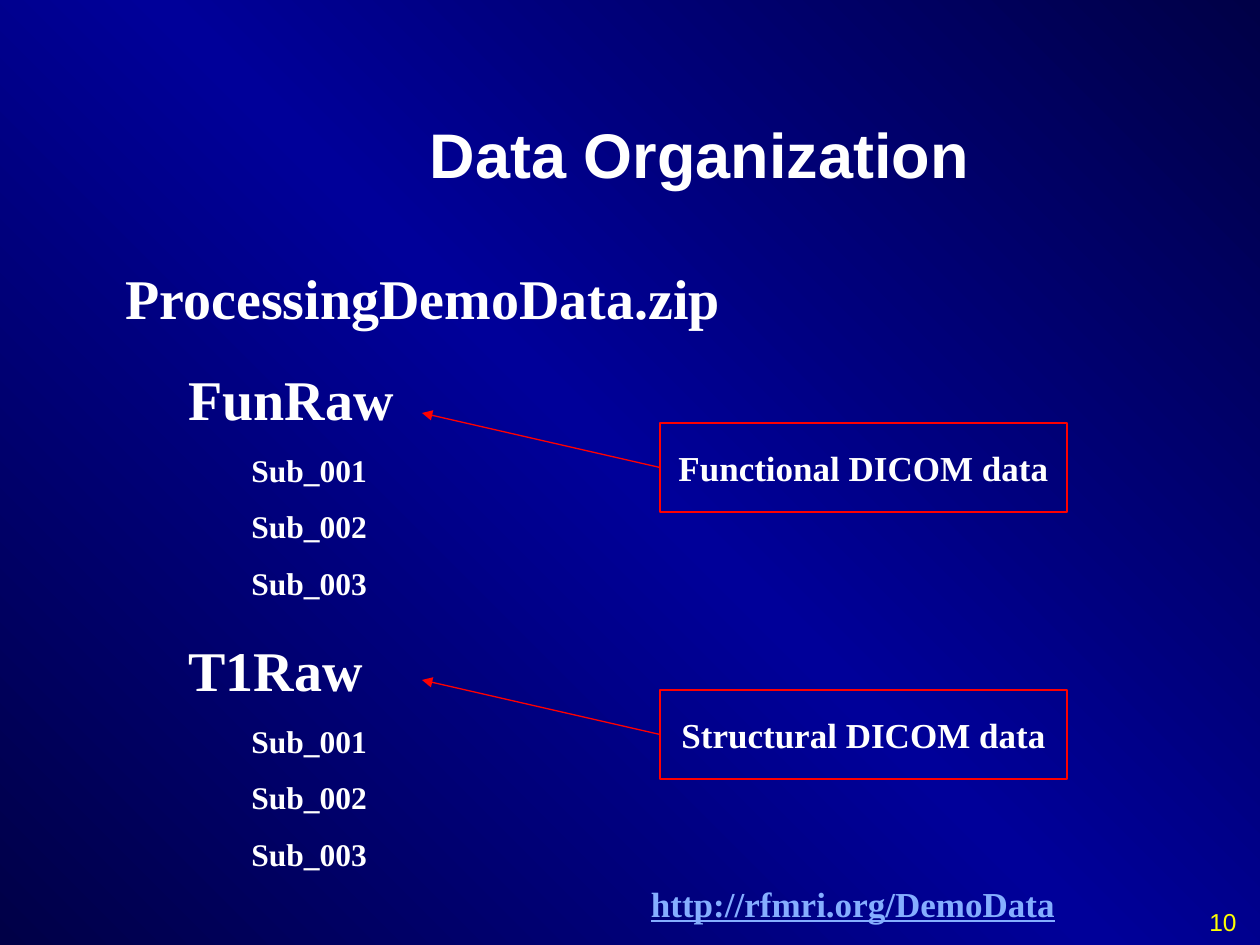
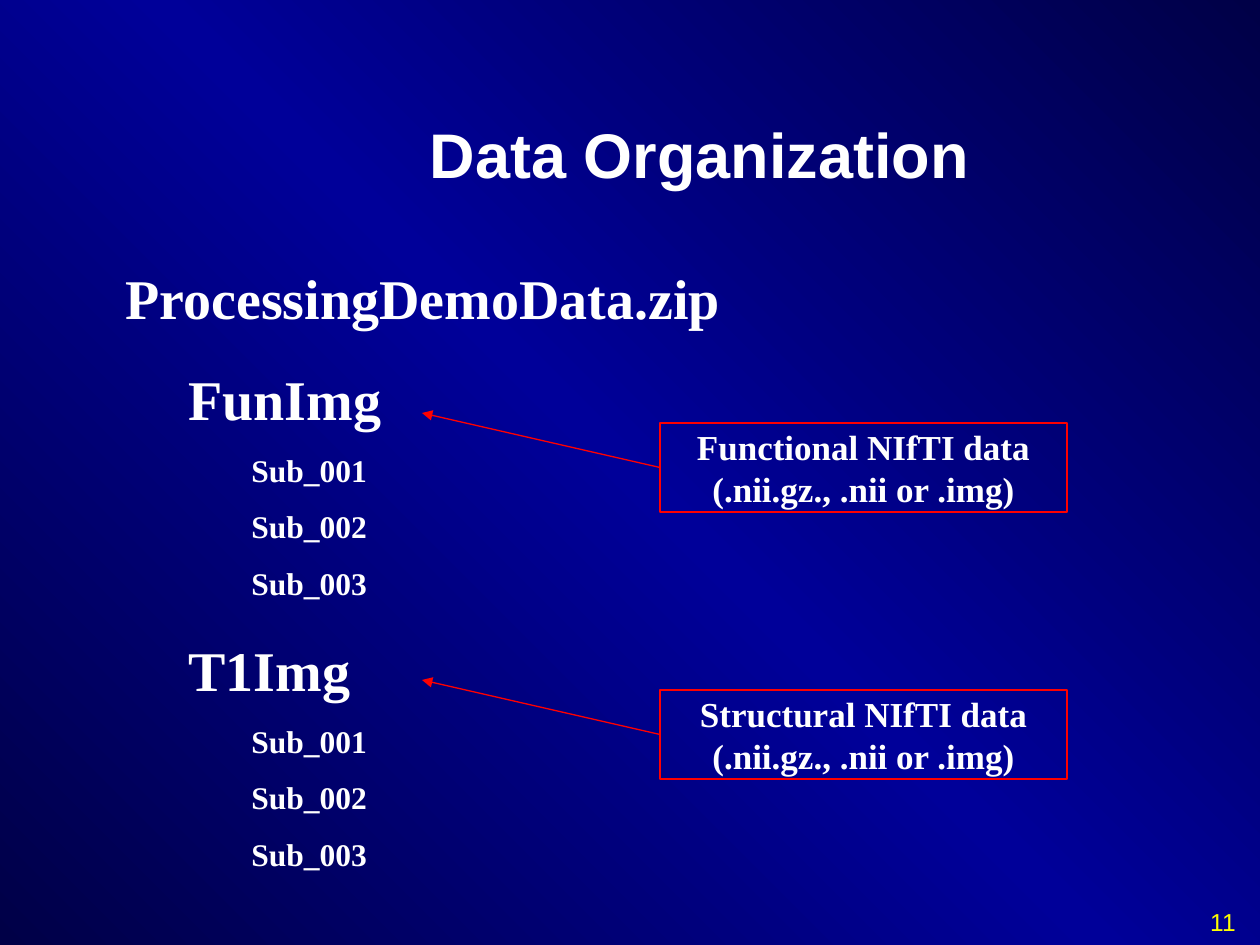
from copy import deepcopy
from dataclasses import dataclass

from lxml.etree import SubElement
from pptx import Presentation
from pptx.dml.color import RGBColor
from pptx.enum.shapes import MSO_CONNECTOR, MSO_SHAPE
from pptx.enum.text import MSO_ANCHOR, PP_ALIGN
from pptx.oxml.ns import qn
from pptx.shapes.autoshape import Shape
from pptx.slide import Slide
from pptx.text.text import _Paragraph as Paragraph
from pptx.util import Emu, Inches, Pt

PX_PER_INCH = 126
SANS, SERIF = "Arial", "Times New Roman"
WHITE, RED, YELLOW, LINK_BLUE = "FFFFFF", "FF0000", "FFFF00", "85AEFF"
BACKGROUND_STOPS = [(0, "000047"), (0.5, "000099"), (1, "000047")]
SUBJECTS = ["Sub_001", "Sub_002", "Sub_003"]
LEVEL_SIZES = [32, 32, 18]
LEVEL_INDENT = 63
FOLDER_PITCH = 267


@dataclass(frozen=True)
class TextStyle:
    size: int
    font: str = SERIF
    color: str = WHITE
    bold: bool = True
    underline: bool = False


@dataclass(frozen=True)
class Box:
    left: int
    top: int
    width: int
    height: int

    def emu(self) -> list[Emu]:
        return [px(value) for value in (self.left, self.top, self.width, self.height)]


@dataclass(frozen=True)
class Folder:
    name: str
    note: str


@dataclass(frozen=True)
class DataSlide:
    number: int
    folders: list[Folder]
    address: str = ""


TITLE_STYLE = TextStyle(36, SANS)
NOTE_STYLE = TextStyle(20)
ADDRESS_STYLE = TextStyle(20, color=LINK_BLUE, underline=True)
NUMBER_STYLE = TextStyle(14, SANS, YELLOW, bold=False)

TITLE_BOX = Box(372, 66, 655, 174)
TREE_BOX = Box(113, 224, 993, 656)
ADDRESS_BOX = Box(451, 861, 804, 84)
NUMBER_BOX = Box(1186, 901, 74, 44)

DATA_SLIDES = [
    DataSlide(
        10,
        [Folder("FunRaw", "Functional DICOM data"), Folder("T1Raw", "Structural DICOM data")],
        "http://rfmri.org/DemoData",
    ),
    DataSlide(
        11,
        [
            Folder("FunImg", "Functional NIfTI data (.nii.gz., .nii or .img)"),
            Folder("T1Img", "Structural NIfTI data (.nii.gz., .nii or .img)"),
        ],
    ),
]


def px(value: int) -> Emu:
    return Emu(round(value * Inches(1) / PX_PER_INCH))


def rgb(color: str) -> RGBColor:
    return RGBColor.from_string(color)


def style_paragraph(paragraph: Paragraph, style: TextStyle) -> None:
    font = paragraph.font
    font.name = style.font
    font.size = Pt(style.size)
    font.bold = style.bold
    font.underline = style.underline
    font.color.rgb = rgb(style.color)


def write_centred(shape: Shape, text: str, style: TextStyle, anchor: MSO_ANCHOR) -> None:
    frame = shape.text_frame
    frame.word_wrap = True
    frame.vertical_anchor = anchor
    paragraph = frame.paragraphs[0]
    paragraph.text = text
    paragraph.alignment = PP_ALIGN.CENTER
    style_paragraph(paragraph, style)


def add_label(
    slide: Slide, box: Box, text: str, style: TextStyle, anchor: MSO_ANCHOR = MSO_ANCHOR.MIDDLE
) -> None:
    write_centred(slide.shapes.add_textbox(*box.emu()), text, style, anchor)


def paint_background(slide: Slide) -> None:
    fill = slide.background.fill
    fill.gradient()
    fill.gradient_angle = 45
    stop_list = slide.element.find(f".//{qn('a:gsLst')}")
    stop_list.append(deepcopy(stop_list[-1]))
    for stop, (position, color) in zip(fill.gradient_stops, BACKGROUND_STOPS):
        stop.position = position
        stop.color.rgb = rgb(color)


def add_folder_tree(slide: Slide, folders: list[Folder]) -> None:
    """Write the archive, its folders and their subjects as an indented list."""
    entries = [(0, "ProcessingDemoData.zip")]
    for folder in folders:
        entries.append((1, folder.name))
        entries += [(2, subject) for subject in SUBJECTS]

    frame = slide.shapes.add_textbox(*TREE_BOX.emu()).text_frame
    frame.word_wrap = True
    for index, (level, text) in enumerate(entries):
        paragraph = frame.add_paragraph() if index else frame.paragraphs[0]
        paragraph.text = text
        paragraph.level = level
        paragraph.line_spacing = 1.5
        properties = paragraph._p.get_or_add_pPr()
        properties.set("marL", str(px(level * LEVEL_INDENT)))
        properties.set("indent", "0")
        style_paragraph(paragraph, TextStyle(LEVEL_SIZES[level]))


def add_folder_note(slide: Slide, note: str, offset: int) -> None:
    """Draw a framed note with an arrow pointing back to its folder."""
    box = Box(660, 423 + offset, 407, 89)
    frame = slide.shapes.add_shape(MSO_SHAPE.RECTANGLE, *box.emu())
    frame.shadow.inherit = False
    frame.fill.background()
    write_centred(frame, note, NOTE_STYLE, MSO_ANCHOR.MIDDLE)

    arrow = slide.shapes.add_connector(
        MSO_CONNECTOR.STRAIGHT, px(422), px(413 + offset), px(box.left), px(472 + offset)
    )
    arrow.end_connect(frame, 1)
    for outlined in (frame, arrow):
        outlined.line.color.rgb = rgb(RED)
        outlined.line.width = Pt(0.75)
    SubElement(arrow.line._get_or_add_ln(), qn("a:headEnd"), type="triangle")
    SubElement(arrow._element.spPr, qn("a:effectLst"))


def add_data_slide(presentation: Presentation, content: DataSlide) -> None:
    slide = presentation.slides.add_slide(presentation.slide_layouts[6])
    paint_background(slide)
    add_label(slide, TITLE_BOX, "Data Organization", TITLE_STYLE)
    add_folder_tree(slide, content.folders)
    for index, folder in enumerate(content.folders):
        add_folder_note(slide, folder.note, index * FOLDER_PITCH)
    if content.address:
        add_label(slide, ADDRESS_BOX, content.address, ADDRESS_STYLE)
    add_label(slide, NUMBER_BOX, str(content.number), NUMBER_STYLE, MSO_ANCHOR.TOP)


def main() -> None:
    presentation = Presentation()
    presentation.slide_width = px(1260)
    presentation.slide_height = px(945)
    for content in DATA_SLIDES:
        add_data_slide(presentation, content)
    presentation.save("out.pptx")


if __name__ == "__main__":
    main()
